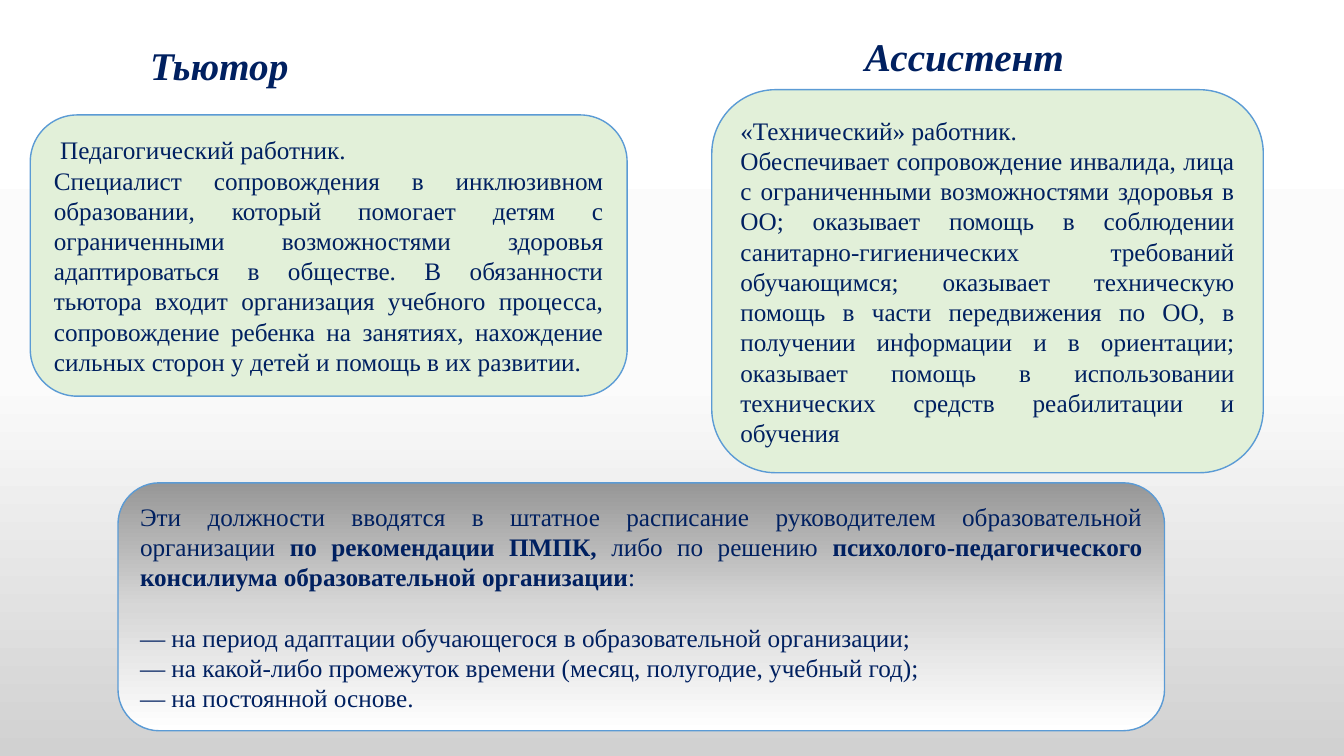
"""Build the slide that compares a tutor with an assistant."""
from copy import deepcopy
from dataclasses import dataclass

from pptx import Presentation
from pptx.dml.color import RGBColor
from pptx.enum.shapes import MSO_SHAPE
from pptx.enum.text import MSO_ANCHOR, MSO_AUTO_SIZE, PP_ALIGN
from pptx.oxml.ns import qn
from pptx.util import Inches, Pt

ROUNDED = MSO_SHAPE.ROUNDED_RECTANGLE
TOP, MIDDLE = MSO_ANCHOR.TOP, MSO_ANCHOR.MIDDLE
NO_AUTOFIT = MSO_AUTO_SIZE.NONE
LEFT, JUSTIFY = PP_ALIGN.LEFT, PP_ALIGN.JUSTIFY
FONT = "Times New Roman"
COLORS = {
    "text": "002060",
    "card": "E2F0D9",
    "line": "5B9BD5",
}
GRADIENTS = {
    "page": ("FFFFFF", "FBFBFB", "D1D1D1"),
    "note": ("979797", "D7D7D7", "FFFFFF"),
}


@dataclass
class Para:
    """A paragraph of (text, bold) runs."""
    runs: list
    align: PP_ALIGN = JUSTIFY
    before: float = 0


@dataclass
class Card:
    """A rounded card with its place, fill name and paragraphs."""
    box: tuple
    fill: str
    paras: list


CARDS = [
    Card((0.3, 1.14, 5.92, 2.79), "card", [
        Para([(" Педагогический работник.", False)]),
        Para([("Специалист сопровождения в инклюзивном образовании, который помогает "
               "детям с ограниченными возможностями здоровья адаптироваться в обществе. "
               "В обязанности тьютора входит организация учебного процесса, "
               "сопровождение ребенка на занятиях, нахождение сильных сторон у детей "
               "и помощь в их развитии.", False)]),
    ]),
    Card((1.17, 4.79, 10.38, 2.46), "note", [
        Para([("Эти должности вводятся в штатное расписание руководителем "
               "образовательной организации ", False),
              ("по рекомендации ПМПК,", True),
              (" либо по решению ", False),
              ("психолого-педагогического консилиума образовательной организации", True),
              (":", False)]),
        Para([("— на период адаптации обучающегося в образовательной организации;",
               False)], LEFT, 21.5),
        Para([("— на какой-либо промежуток времени (месяц, полугодие, учебный год);",
               False)], LEFT),
        Para([("— на постоянной основе.", False)], LEFT),
    ]),
    Card((7.06, 0.89, 5.47, 3.8), "card", [
        Para([("«Технический» работник.", False)]),
        Para([("Обеспечивает сопровождение инвалида, лица с ограниченными возможностями "
               "здоровья в ОО; оказывает помощь в соблюдении санитарно-гигиенических "
               "требований обучающимся; оказывает техническую помощь в части "
               "передвижения по ОО, в получении информации и в ориентации; оказывает "
               "помощь в использовании технических средств реабилитации и обучения",
               False)]),
    ]),
]


def rgb(name: str) -> RGBColor:
    """Return the named colour."""
    return RGBColor.from_string(COLORS[name])


def fill_gradient(fill, element, name: str) -> None:
    """Give a fill three evenly spaced stops running downwards."""
    fill.gradient()
    fill.gradient_angle = 270
    stops = next(element.iter(qn("a:gsLst")))
    stops.append(deepcopy(stops[-1]))
    for i, (stop, color) in enumerate(zip(fill.gradient_stops, GRADIENTS[name])):
        stop.position = i / 2
        stop.color.rgb = RGBColor.from_string(color)


def add_text(p, text: str, *, size: float = 18, bold: bool = False,
             italic: bool = False) -> None:
    """Add a formatted run to a paragraph."""
    r = p.add_run()
    r.text = text
    r.font.name = FONT
    r.font.size = Pt(size)
    r.font.bold = bold
    r.font.italic = italic
    r.font.color.rgb = rgb("text")


def format_heading(sp, text: str, wrap: bool) -> None:
    """Write a heading into a title or text box."""
    tf = sp.text_frame
    tf.word_wrap = wrap
    tf.auto_size = NO_AUTOFIT
    tf.vertical_anchor = TOP
    p = tf.paragraphs[0]
    p.alignment = LEFT
    add_text(p, text, size=28, bold=True, italic=True)


def add_card(s, card: Card) -> None:
    """Draw a rounded card with its text."""
    sp = s.shapes.add_shape(ROUNDED, *map(Inches, card.box))
    sp.shadow.inherit = False
    sp.line.color.rgb = rgb("line")
    sp.line.width = Pt(1)
    if card.fill in GRADIENTS:
        fill_gradient(sp.fill, sp.element, card.fill)
    else:
        sp.fill.solid()
        sp.fill.fore_color.rgb = rgb(card.fill)
    tf = sp.text_frame
    tf.word_wrap = True
    tf.vertical_anchor = MIDDLE
    for i, para in enumerate(card.paras):
        p = tf.add_paragraph() if i else tf.paragraphs[0]
        p.alignment = para.align
        p.space_before = Pt(para.before)
        for text, bold in para.runs:
            add_text(p, text, bold=bold)


def main() -> None:
    """Build and save the presentation."""
    prs = Presentation()
    prs.slide_width, prs.slide_height = Inches(13.33), Inches(7.5)
    s = prs.slides.add_slide(prs.slide_layouts.get_by_name("Title Only"))
    fill_gradient(s.background.fill, s.element, "page")

    title = s.shapes.title
    title.left, title.top = Inches(1.39), Inches(0.36)
    title.width, title.height = Inches(2.48), Inches(0.57)
    format_heading(title, "Тьютор", True)
    heading = s.shapes.add_textbox(*map(Inches, (8.48, 0.27, 2.19, 0.57)))
    format_heading(heading, "Ассистент", False)

    for card in CARDS:
        add_card(s, card)
    prs.save("out.pptx")


if __name__ == "__main__":
    main()
